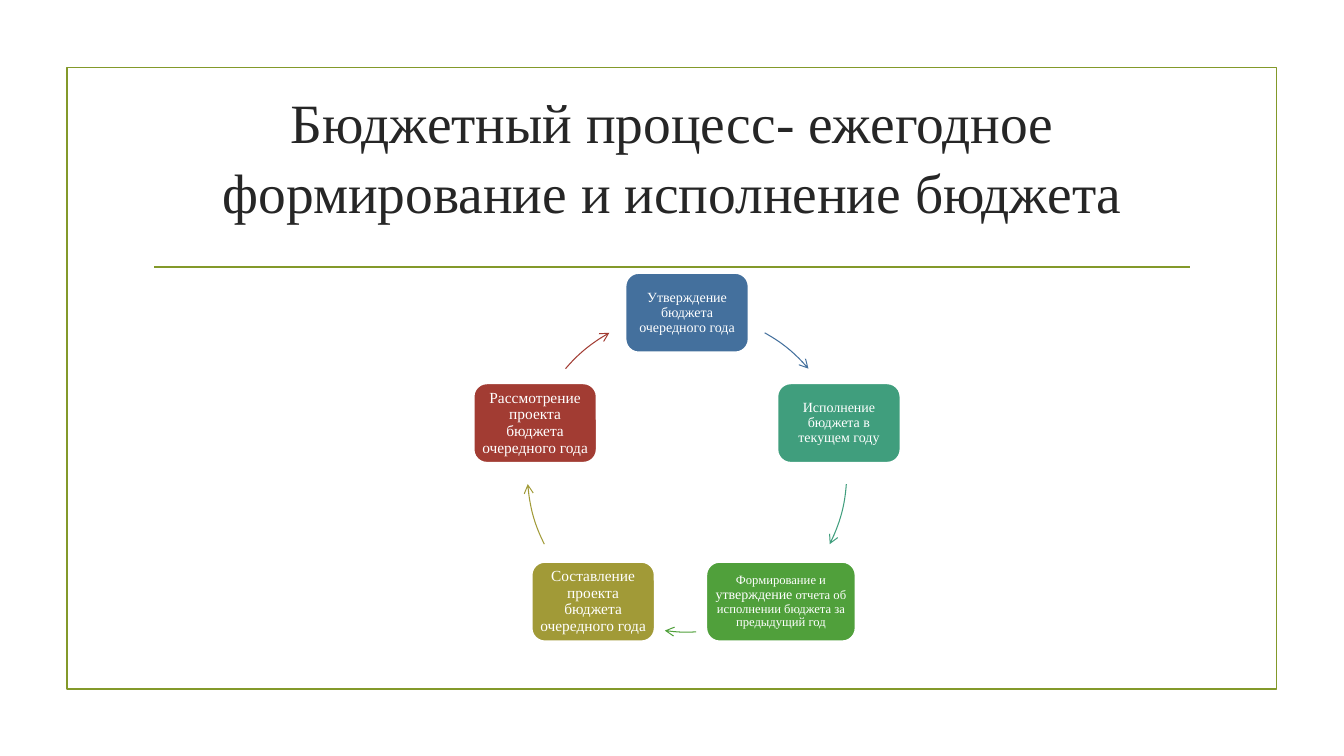
import math
import pptx
import pptx.util
import pptx.dml.color
import pptx.enum.shapes
import pptx.enum.text
from lxml import etree
from pptx.util import Cm, Pt

FONT = "Times New Roman"
OLIVE = "83992A"
KIND = pptx.enum.shapes.MSO_SHAPE
ALIGN = pptx.enum.text.PP_ALIGN
ANCHOR = pptx.enum.text.MSO_ANCHOR
NS = "{http://schemas.openxmlformats.org/drawingml/2006/main}"

STEPS = [
    ("44709D", 3.1, [("Утверждение бюджета очередного года", 10)], (299.1, 319.5)),
    ("409E7D", 3.1, [("Исполнение бюджета в текущем году", 10)], (4.2, 26.7)),
    ("50A03B", 3.76, [("Формирование и ", 9), ("утверждение", 10),
                      (" отчета об исполнении бюджета за предыдущий год", 9)], (86.7, 98)),
    ("A19A37", 3.1, [("Составление проекта бюджета очередного года", 11)], (153.3, 175.8)),
    ("A23C33", 3.1, [("Рассмотрение проекта бюджета очередного года", 11)], (220.5, 240.9)),
]


def tint(code):
    return pptx.dml.color.RGBColor.from_string(code)


def stroke(item, code, width):
    item.line.color.rgb = tint(code)
    item.line.width = Pt(width)


def shape(slide, kind, left, top, width, height, fill=None):
    item = slide.shapes.add_shape(kind, Cm(left), Cm(top), Cm(width), Cm(height))
    item.shadow.inherit = False
    if fill:
        item.fill.solid()
        item.fill.fore_color.rgb = tint(fill)
    else:
        item.fill.background()
    return item


def frame(slide, left, top, width, height):
    border = shape(slide, KIND.RECTANGLE, left, top, width, height)
    stroke(border, OLIVE, 1.25)
    level = Cm(top + 5.03)
    rule = slide.shapes.add_connector(
        pptx.enum.shapes.MSO_CONNECTOR.STRAIGHT,
        Cm(left + 2.2), level, Cm(left + width - 2.17), level)
    stroke(rule, OLIVE, 1.25)
    etree.SubElement(rule._element.spPr, NS + "effectLst")


def header(slide, text, left, top, width, height):
    title = slide.shapes.title
    title.left, title.top = Cm(left), Cm(top)
    title.width, title.height = Cm(width), Cm(height)
    body = title.text_frame
    body.text = text
    body.word_wrap = True
    body.auto_size = pptx.enum.text.MSO_AUTO_SIZE.NONE
    body.vertical_anchor = ANCHOR.MIDDLE
    para = body.paragraphs[0]
    para.alignment = ALIGN.CENTER
    para.line_spacing = 1.05
    para.font.name = FONT
    para.font.size = Pt(39.6)
    para.font.color.rgb = tint("262626")


def node(slide, color, parts, left, top, width, height):
    box = shape(slide, KIND.ROUNDED_RECTANGLE, left, top, width, height, color)
    stroke(box, "FFFFFF", 1.25)
    body = box.text_frame
    body.word_wrap = True
    body.vertical_anchor = ANCHOR.MIDDLE
    body.margin_left = body.margin_right = Cm(0.1)
    body.margin_top = body.margin_bottom = Cm(0.1)
    para = body.paragraphs[0]
    para.alignment = ALIGN.CENTER
    para.line_spacing = 0.9
    para.font.name = FONT
    para.font.color.rgb = tint("FFFFFF")
    for text, size in parts:
        run = para.add_run()
        run.text = text
        run.font.size = Pt(size)


def arrow(slide, color, angles, left, top, size):
    arc = shape(slide, KIND.ARC, left, top, size, size)
    for index, angle in enumerate(angles):
        arc.adjustments[index] = angle * 0.6
    stroke(arc, color, 0.75)
    etree.SubElement(arc.line._get_or_add_ln(), NS + "tailEnd", type="arrow")


def cycle(slide, left, top, size, height=2):
    radius = size / 2
    for index, (color, width, parts, angles) in enumerate(STEPS):
        turn = math.tau * index / len(STEPS)
        across = left + radius * (1 + math.sin(turn))
        down = top + radius * (1 - math.cos(turn))
        node(slide, color, parts, across - width / 2, down - height / 2, width, height)
        arrow(slide, color, angles, left, top, size)


def main():
    deck = pptx.Presentation()
    deck.slide_width, deck.slide_height = Cm(33.87), Cm(19.05)
    slide = deck.slides.add_slide(deck.slide_layouts[5])
    frame(slide, 1.69, 1.7, 30.48, 15.67)
    header(slide, "Бюджетный процесс- ежегодное формирование и исполнение бюджета",
           3.61, 2.16, 26.67, 3.48)
    cycle(slide, 13.29, 7.88, 8.05)
    deck.save("out.pptx")


if __name__ == "__main__":
    main()
